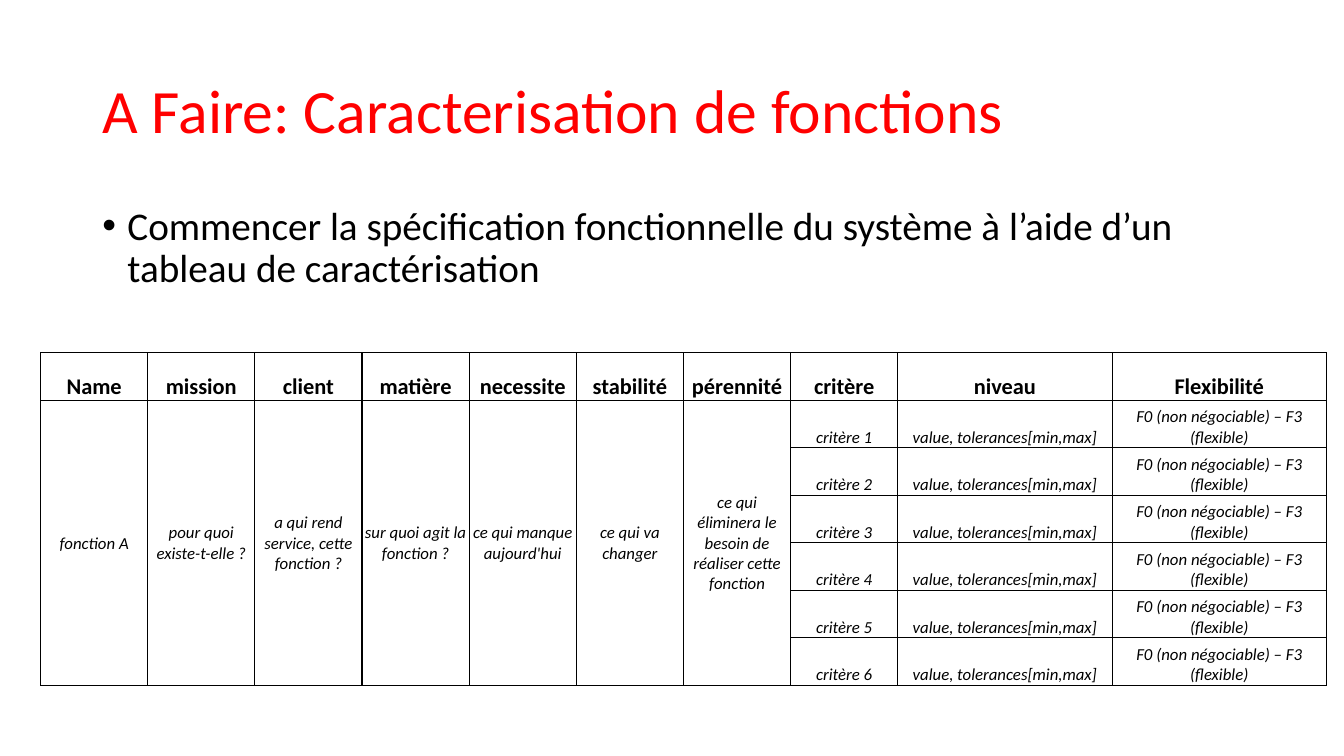
"""Build the function characterisation slide with its table."""
from pptx import Presentation
from pptx.dml.color import RGBColor
from pptx.enum.text import MSO_ANCHOR as Anchor, MSO_AUTO_SIZE as AutoSize, PP_ALIGN as Align
from pptx.oxml.ns import qn
from pptx.util import Pt
from lxml.etree import SubElement

RED = RGBColor(0xFF, 0x00, 0x00)
BLACK = RGBColor(0x00, 0x00, 0x00)
FONT = "Calibri"

HEADERS = ["Name", "mission", "client", "matière", "necessite", "stabilité",
           "pérennité", "critère", "niveau", "Flexibilité"]
FUNCTION = ["fonction A", "pour quoi existe-t-elle ?",
            "a qui rend service, cette fonction ?", "sur quoi agit la fonction ?",
            "ce qui manque aujourd'hui", "ce qui va changer",
            "ce qui éliminera le besoin de réaliser cette fonction"]
LEVEL = "value, tolerances[min,max]"
FLEXIBILITY = "F0 (non négociable) – F3 (flexible)"
CRITERIA = 6
COL_WIDTH = 76.56
ROW_HEIGHT = 33.94


def add_run(p, text, size, color=BLACK, bold=False, italic=False):
    r = p.add_run()
    r.text = text
    r.font.name = FONT
    r.font.size = Pt(size)
    r.font.color.rgb = color
    r.font.bold = bold
    r.font.italic = italic


def set_title(s, text):
    sp = s.shapes.title
    sp.left, sp.top, sp.width, sp.height = Pt(66), Pt(28.75), Pt(828), Pt(104.4)
    tf = sp.text_frame
    tf.auto_size = AutoSize.NONE
    tf.vertical_anchor = Anchor.MIDDLE
    p = tf.paragraphs[0]
    p.alignment = Align.LEFT
    p.line_spacing = 0.9
    add_run(p, text, 44, RED)


def add_bullet(s, text):
    sp = s.shapes.add_textbox(Pt(66), Pt(143.75), Pt(828), Pt(72.75))
    tf = sp.text_frame
    tf.word_wrap = True
    p = tf.paragraphs[0]
    p.line_spacing = 0.9
    p.space_before = Pt(10)
    ppr = p._p.get_or_add_pPr()
    ppr.set("marL", str(Pt(18)))
    ppr.set("indent", str(Pt(-18)))
    SubElement(ppr, qn("a:buFont")).set("typeface", "Arial")
    SubElement(ppr, qn("a:buChar")).set("char", "•")
    add_run(p, text, 28)


def add_borders(cell):
    tcpr = cell._tc.get_or_add_tcPr()
    for i, side in enumerate(("lnL", "lnR", "lnT", "lnB")):
        ln = SubElement(tcpr, qn(f"a:{side}"))
        ln.set("w", str(Pt(1)))
        fill = SubElement(ln, qn("a:solidFill"))
        SubElement(fill, qn("a:srgbClr")).set("val", str(BLACK))
        tcpr.insert(i, ln)


def fill_cell(cell, text, anchor=Anchor.BOTTOM, size=12, bold=False, italic=True):
    cell.vertical_anchor = anchor
    p = cell.text_frame.paragraphs[0]
    p.alignment = Align.CENTER
    add_run(p, text, size, bold=bold, italic=italic)


def add_function_table(s):
    widths = [COL_WIDTH] * 8 + [2 * COL_WIDTH] * 2
    rows = CRITERIA + 1
    table = s.shapes.add_table(rows, len(widths), Pt(29), Pt(252), Pt(sum(widths)),
                               Pt(rows * ROW_HEIGHT)).table
    table.first_row = table.horz_banding = False
    for col, width in zip(table.columns, widths):
        col.width = Pt(width)
    for row in table.rows:
        row.height = Pt(ROW_HEIGHT)
    for cell in table.iter_cells():
        cell.margin_left = cell.margin_right = cell.margin_top = Pt(0.75)
        cell.margin_bottom = 0
        cell.fill.background()
        add_borders(cell)
    for c, text in enumerate(HEADERS):
        fill_cell(table.cell(0, c), text, size=16, bold=True, italic=False)
    for c, text in enumerate(FUNCTION):
        table.cell(1, c).merge(table.cell(CRITERIA, c))
        fill_cell(table.cell(1, c), text, Anchor.MIDDLE)
    for n in range(1, rows):
        for c, text in enumerate((f"critère {n}", LEVEL, FLEXIBILITY), len(FUNCTION)):
            fill_cell(table.cell(n, c), text)


def main():
    prs = Presentation()
    prs.slide_width, prs.slide_height = Pt(960), Pt(540)
    s = prs.slides.add_slide(prs.slide_layouts[5])
    set_title(s, "A Faire: Caracterisation de fonctions")
    add_bullet(s, "Commencer la spécification fonctionnelle du système à l’aide d’un "
                  "tableau de caractérisation")
    add_function_table(s)
    prs.save("out.pptx")


if __name__ == "__main__":
    main()
